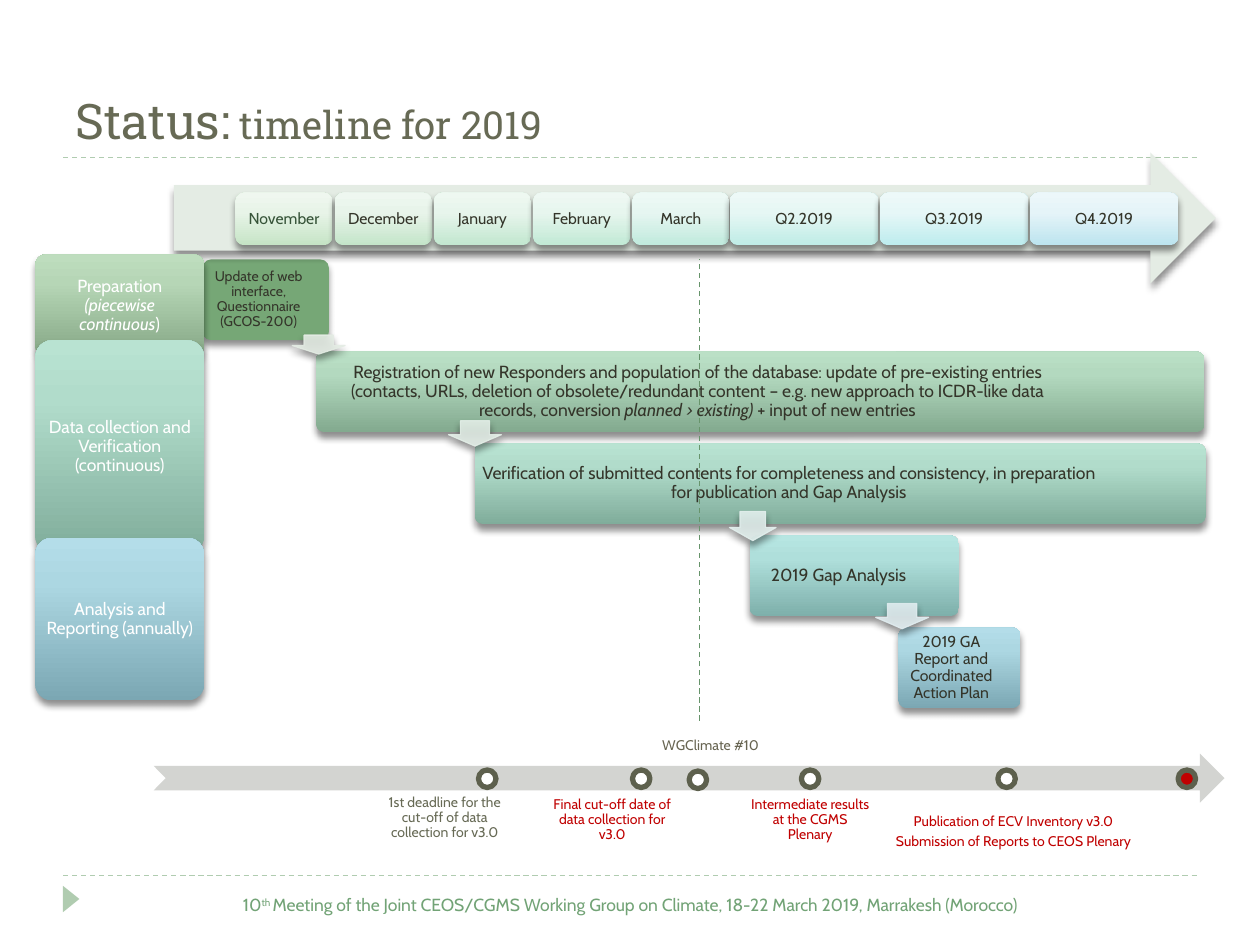
"""Build the 2019 status timeline slide."""
from copy import deepcopy

from lxml.etree import SubElement
from pptx import Presentation
from pptx.dml.color import RGBColor
from pptx.enum.dml import MSO_LINE
from pptx.enum.shapes import MSO_CONNECTOR, MSO_SHAPE as Shape
from pptx.enum.text import MSO_ANCHOR as Anchor, PP_ALIGN as Align
from pptx.oxml.ns import qn
from pptx.util import Pt

DARK, RED, OLIVE, WHITE = "34352A", "C00000", "676A55", "FFFFFF"
GREEN = ("85A785", "B6D6B6", "BEDDBE")
MINT = ("83AA8F", "B3D9BF", "BBE0C6")
SEA = ("80AD9B", "B1DCCB", "B9E3D2")
TEAL = ("7EB0AB", "AFDFDB", "B7E6E2")
BLUE = ("7BA7B3", "ACD7E2", "B4DDE9")


def color(value):
    """Turn a hex string into a colour."""
    return RGBColor.from_string(value)


def paint(shape, colors, middle=0.72):
    """Fill with one colour, or with three from bottom to top."""
    fill = shape.fill
    if isinstance(colors, str):
        fill.solid()
        fill.fore_color.rgb = color(colors)
        return
    fill.gradient()
    fill.gradient_angle = 90
    stops = shape._element.spPr.find(".//" + qn("a:gsLst"))
    stops.append(deepcopy(stops[-1]))
    for stop, place, value in zip(fill.gradient_stops, (0, middle, 1), colors):
        stop.position = place
        stop.color.rgb = color(value)


def add_shadow(shape):
    """Cast a soft shadow downwards."""
    effects = shape._element.spPr.find(qn("a:effectLst"))
    outer = SubElement(effects, qn("a:outerShdw"), blurRad=str(Pt(4)),
                       dist=str(Pt(3)), dir="5400000", rotWithShape="0")
    black = SubElement(outer, qn("a:srgbClr"), val="000000")
    SubElement(black, qn("a:alpha"), val="43000")


def add_shape(page, kind, area, colors, shadow=True, middle=0.72):
    """Add a preset shape without outline."""
    shape = page.shapes.add_shape(kind, *map(Pt, area))
    paint(shape, colors, middle)
    shape.line.fill.background()
    shape.shadow.inherit = False
    if shadow:
        add_shadow(shape)
    return shape


def write(shape, lines, size, ink, anchor=Anchor.MIDDLE, margins=(2.9,) * 4,
          align=Align.CENTER, spacing=0.9, font="Cabin"):
    """Write paragraphs, each a tuple of pieces, and return all runs."""
    frame = shape.text_frame
    frame.word_wrap = True
    frame.vertical_anchor = anchor
    (frame.margin_left, frame.margin_top,
     frame.margin_right, frame.margin_bottom) = map(Pt, margins)
    spans = []
    for index, pieces in enumerate(lines):
        para = frame.add_paragraph() if index else frame.paragraphs[0]
        para.alignment = align
        para.line_spacing = spacing
        if index:
            para.space_before = Pt(2.5)
        for piece in pieces:
            span = para.add_run()
            span.text = piece
            span.font.size = Pt(size)
            span.font.name = font
            span.font.color.rgb = color(ink)
            spans.append(span)
    return spans


def add_text(page, area, lines, size, ink, **options):
    """Add a text box."""
    box = page.shapes.add_textbox(*map(Pt, area))
    return write(box, lines, size, ink, **options)


def add_block(page, area, colors, pieces, size, ink, spare=0):
    """Add a rounded block; its second piece is italic, spare is kept free at right."""
    block = add_shape(page, Shape.ROUNDED_RECTANGLE, area, colors)
    block.adjustments[0] = 0.1
    spans = write(block, [pieces], size, ink, margins=(2.9, 2.9, 2.9 + spare, 2.9))
    for span in spans[1:2]:
        span.font.italic = True


def add_month(page, left, width, name, colors, ink=DARK):
    """Add one period of the top arrow."""
    tile = add_shape(page, Shape.ROUNDED_RECTANGLE, (left, 110, width, 30.2),
                     colors, middle=0.62)
    write(tile, [(name,)], 9, ink)


def add_step(page, area, tint):
    """Add a slightly transparent arrow between two bars."""
    arrow = add_shape(page, Shape.DOWN_ARROW, area, tint)
    arrow.adjustments[0], arrow.adjustments[1] = 0.55, 0.45
    arrow.line.color.rgb = color(tint)
    arrow.line.width = Pt(0.75)
    for shade in arrow._element.spPr.findall(".//" + qn("a:solidFill") + "/" + qn("a:srgbClr")):
        SubElement(shade, qn("a:alpha"), val="90000")


def add_milestone(page, left, top=440, fill=WHITE):
    """Add a ring on the lower arrow."""
    ring = add_shape(page, Shape.OVAL, (left, top, 10, 10), fill, shadow=False)
    ring.line.color.rgb = color("5D604D")
    ring.line.width = Pt(3)


def add_dashes(page, start, end, ink):
    """Add a thin dashed line."""
    line = page.shapes.add_connector(MSO_CONNECTOR.STRAIGHT, *map(Pt, start + end))
    line.line.color.rgb = color(ink)
    line.line.width = Pt(0.75)
    line.line.dash_style = MSO_LINE.DASH
    SubElement(line._element.spPr, qn("a:effectLst"))


def add_frame(page):
    """Add rules, title and footer."""
    for height in (500.4, 90):
        add_dashes(page, (36, height), (684, height), "B0CCB0")
    marker = add_shape(page, Shape.ISOSCELES_TRIANGLE, (33.1, 509, 15.1, 9.4), "B0CCB0", False)
    marker.rotation = 90
    plain = {"margins": (7.2, 3.6, 7.2, 3.6), "spacing": 1}
    title = add_text(page, (36, 10.8, 658.8, 77.8), [("Status:", " timeline for 2019")],
                     28, OLIVE, anchor=Anchor.BOTTOM, align=Align.LEFT,
                     font="Roboto Slab", **plain)
    title[1].font.size = Pt(22)
    footer = add_text(page, (42.5, 507.6, 635, 28.8), [(
        "10", "th ", "Meeting of the Joint CEOS/CGMS Working Group on Climate, "
        "18-22 March 2019, Marrakesh (Morocco)")], 10, "72A376", anchor=Anchor.TOP, **plain)
    footer[1]._r.get_or_add_rPr().set("baseline", "30000")


def add_bars(page):
    """Add the cascade of activities and its arrows."""
    bars = [
        (115.9, 148.3, 72, "76A776", 8, 8, ("Update of web interface, Questionnaire (GCOS-200)",)),
        (180.7, 200.9, 507.6, MINT, 10, 72, (
            "Registration of new Responders and population of the database: update of "
            "pre-existing entries (contacts, URLs, deletion of obsolete/redundant content – "
            "e.g. new approach to ICDR-like data records, conversion ",
            "planned > existing) ", "+ input of new entries")),
        (271.4, 253.4, 417.6, SEA, 10, 59, (
            "Verification of submitted contents for completeness and consistency, "
            "in preparation for publication and Gap Analysis",)),
        (428.4, 306, 119.5, TEAL, 10, 18, ("2019 Gap Analysis",)),
        (513.4, 358.6, 69.8, BLUE, 9, 9.4, ("2019 GA Report and Coordinated Action Plan",)),
    ]
    for left, top, width, colors, size, spare, pieces in bars:
        add_block(page, (left, top, width, 46.1), colors, pieces, size, DARK, spare)
    add_step(page, (167, 191.5, 30.2, 10.8), "E4ECE4")
    add_step(page, (256.3, 240.5, 30.2, 14.4), "E3EEE7")
    add_step(page, (416.9, 292.3, 26.6, 16.6), "E2EFED")
    add_step(page, (500.4, 344.9, 30.2, 14.4), "E1EDF0")


def add_milestones(page):
    """Add the lower arrow with its dates."""
    add_shape(page, Shape.NOTCHED_RIGHT_ARROW, (87.8, 430.6, 612, 28.1), "D3D4D1", False)
    labels = [
        (215.3, 445.7, 77.8, 38.9, Anchor.BOTTOM, OLIVE,
         ["1st deadline for the cut-off of data collection for v3.0"]),
        (311, 451.4, 77.8, 38.9, Anchor.TOP, RED,
         ["Final cut-off date of data collection for v3.0"]),
        (424.1, 451.4, 77.8, 28.8, Anchor.TOP, RED,
         ["Intermediate results at the CGMS Plenary"]),
        (507.6, 450, 143.3, 39.6, Anchor.BOTTOM, RED,
         ["Publication of ECV Inventory v3.0", "Submission of Reports to CEOS Plenary"]),
        (367.2, 417.6, 77.8, 16.6, Anchor.TOP, "676451", ["WGClimate #10"]),
    ]
    for left, top, width, height, anchor, ink, lines in labels:
        add_text(page, (left, top, width, height), [(line,) for line in lines], 8, ink,
                 anchor=anchor, margins=(4.3,) * 4)
    for left in (273.4, 361.4, 457.9, 570.2):
        add_milestone(page, left)
    add_milestone(page, 393.8, top=440.6)
    add_milestone(page, 673.2, fill=RED)


def add_calendar(page):
    """Add the top arrow with months and quarters."""
    add_shape(page, Shape.RIGHT_ARROW, (99.4, 87.1, 595.4, 74.9), "E4ECE4")
    months = [("November", "C5E4C5", "E8F4E8", "EFF7EF"), ("December", "C4E5C9", "E8F4EA", "EEF7F0"),
              ("January", "C2E7CF", "E7F5EC", "EEF8F1"), ("February", "C1E9D5", "E7F6EE", "EEF8F3"),
              ("March", "C0EADD", "E6F6F1", "EDF9F5")]
    quarters = [("Q2.2019", "BFECE6", "E6F7F4", "EDF9F7"), ("Q3.2019", "BDECEE", "E6F7F7", "EDF9F9"),
                ("Q4.2019", "BCE4EF", "E5F4F8", "ECF7FA")]
    for index, (name, *colors) in enumerate(months):
        add_month(page, 134.6 + 56.7 * index, 55.4, name, colors, DARK if index else "375439")
    for index, (name, *colors) in enumerate(quarters):
        add_month(page, 417 + 85.7 * index, 85, name, colors)


def add_phases(page):
    """Add the three phases at the left."""
    phases = [
        (145.4, 58.3, GREEN, ("Preparation ", "(piecewise continuous", ")")),
        (194.4, 121.7, SEA, ("Data collection and Verification (continuous)",)),
        (307.4, 92.9, BLUE, ("Analysis and Reporting (annually)",)),
    ]
    for top, height, colors, pieces in phases:
        add_block(page, (20.2, top, 96.5, height), colors, pieces, 10, WHITE)


def main():
    """Build and save the deck."""
    deck = Presentation()
    deck.slide_width, deck.slide_height = Pt(720), Pt(540)
    page = deck.slides.add_slide(deck.slide_layouts[6])
    for add_part in (add_frame, add_bars, add_milestones, add_calendar, add_phases):
        add_part(page)
    add_dashes(page, (399.6, 411.8), (399.6, 148.3), "67946B")
    deck.save("out.pptx")


if __name__ == "__main__":
    main()
